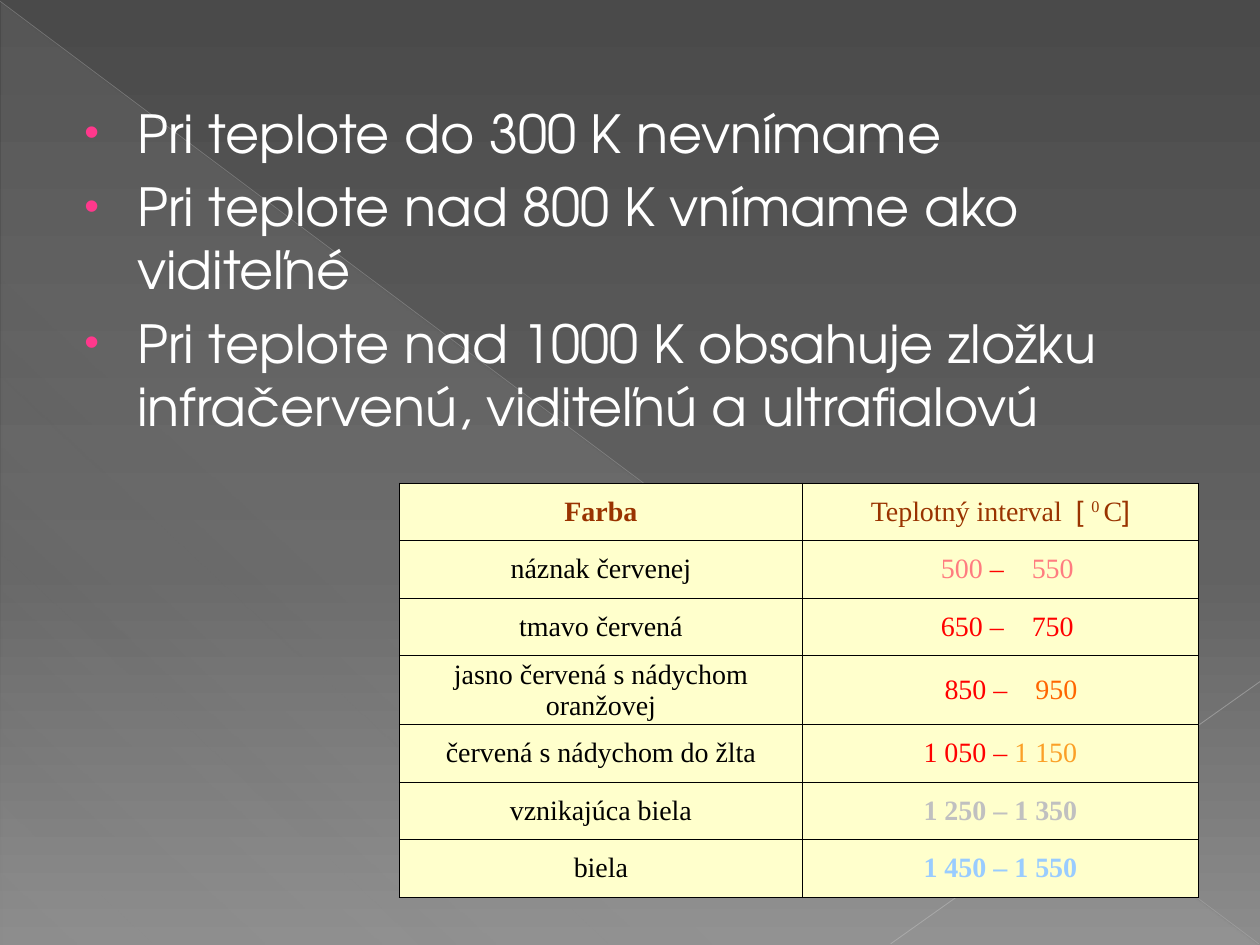
"""Build a slide on visible thermal radiation with a table of glow colours."""
from lxml.etree import SubElement
from pptx import Presentation
from pptx.dml.color import RGBColor
from pptx.enum.shapes import MSO_CONNECTOR as Connector, MSO_SHAPE as Shape
from pptx.enum.text import MSO_ANCHOR as Anchor, PP_ALIGN as Align
from pptx.oxml import parse_xml
from pptx.oxml.ns import nsdecls, qn
from pptx.util import Pt

WHITE = RGBColor(0xFF, 0xFF, 0xFF)
BLACK = RGBColor(0x00, 0x00, 0x00)
PINK = RGBColor(0xFF, 0x38, 0x8C)
CREAM = RGBColor(0xFF, 0xFF, 0xCC)
BROWN = RGBColor(0x99, 0x33, 0x00)
SALMON = RGBColor(0xFF, 0x7C, 0x80)
RED = RGBColor(0xFF, 0x00, 0x00)
ORANGE = RGBColor(0xFF, 0x66, 0x00)
AMBER = RGBColor(0xFB, 0xA0, 0x27)
SILVER = RGBColor(0xC0, 0xC0, 0xC0)
SKY = RGBColor(0x99, 0xCC, 0xFF)
DARK = RGBColor(0x4A, 0x4A, 0x4A)
MIDDLE = RGBColor(0x62, 0x62, 0x62)
LIGHT = RGBColor(0x8C, 0x8C, 0x8C)
HAZE = RGBColor(0xD2, 0xD2, 0xD2)
LONG_RAY = RGBColor(0xBF, 0xBF, 0xBF)
SHORT_RAY = RGBColor(0xC6, 0xC6, 0xC6)

BODY_FONT, TABLE_FONT, BRACKET_FONT = "TeX Gyre Adventor", "Times New Roman", "Arial"

BACKDROP = [(0, DARK, 100), (60, MIDDLE, 100), (100, LIGHT, 100)]
VEIL = [(0, HAZE, 10), (70, HAZE, 8), (100, HAZE, 1)]
RAYS = [
    ((0, 0.7, 719.3, 539.3), LONG_RAY, 0.39, 35),
    ((720, 389.5, 509, 539.3), SHORT_RAY, 0.47, 45),
]
POINTS = [
    "Pri teplote do 300 K nevnímame",
    "Pri teplote nad 800 K vnímame ako viditeľné",
    "Pri teplote nad 1000 K obsahuje zložku infračervenú, viditeľnú a ultrafialovú",
]
WIDE = {"spacing": 12}
HEADER = [
    ("Teplotný interval", BROWN, {}),
    (" ", BROWN, {"spacing": 4}),
    ("[ ", BROWN, {"font": BRACKET_FONT}),
    ("0 ", BROWN, {"raised": True}),
    ("C", BROWN, {}),
    ("]", BROWN, {"font": BRACKET_FONT}),
]
ROWS = [
    (("Farba", BROWN, {"bold": True}), HEADER, 0),
    (("náznak červenej", BLACK, {}),
     [("500 ", SALMON, {}), ("–", RED, {}), (" ", RED, WIDE), ("550", SALMON, {})], 8),
    (("tmavo červená", BLACK, {}),
     [("650 –", RED, {}), (" ", RED, WIDE), ("750", RED, {})], 8),
    (("jasno červená s nádychom oranžovej", BLACK, {}),
     [("850 –", RED, {}), (" ", RED, WIDE), ("950", ORANGE, {})], 12),
    (("červená s nádychom do žlta", BLACK, {}),
     [("1 050 – ", RED, {}), ("1 150", AMBER, {})], 0),
    (("vznikajúca biela", BLACK, {}), [("1 250 – 1 350", SILVER, {"bold": True})], 0),
    (("biela", BLACK, {}), [("1 450 – 1 550", SKY, {"bold": True})], 0),
]
COLUMN_WIDTHS = (230.4, 226.1)
ROW_HEIGHT, TALL_ROW_HEIGHT, TALL_ROW = 32.9, 39.4, 3


def add_text(para, text, color, font=TABLE_FONT, size=16, bold=False, raised=False, spacing=0):
    span = para.add_run()
    span.text = text
    span.font.name, span.font.size, span.font.bold = font, Pt(size), bold
    span.font.color.rgb = color
    properties = span.font._element
    if raised:
        properties.set("baseline", "30000")
    if spacing:
        properties.set("spc", str(spacing * 100))


def gradient(stops, angle):
    marks = "".join(
        f'<a:gs pos="{place * 1000}"><a:srgbClr val="{color}">'
        f'<a:alpha val="{alpha * 1000}"/></a:srgbClr></a:gs>'
        for place, color, alpha in stops)
    return parse_xml(f'<a:gradFill {nsdecls("a")} rotWithShape="1"><a:gsLst>{marks}</a:gsLst>'
                     f'<a:lin ang="{angle * 60000}" scaled="0"/></a:gradFill>')


def set_gradient(fill, parent, stops, angle):
    fill.solid()
    solid = parent.find(".//" + qn("a:solidFill"))
    solid.getparent().replace(solid, gradient(stops, angle))


def add_backdrop(page):
    set_gradient(page.background.fill, page._element, BACKDROP, 90)
    veil = page.shapes.add_shape(Shape.RIGHT_TRIANGLE, Pt(0.7), Pt(1.4), Pt(718.6), Pt(538.6))
    veil.shadow.inherit = False
    veil.line.fill.background()
    set_gradient(veil.fill, veil._element, VEIL, 133)
    for ends, color, width, alpha in RAYS:
        ray = page.shapes.add_connector(Connector.STRAIGHT, *map(Pt, ends))
        ray.line.color.rgb, ray.line.width = color, Pt(width)
        tint = ray._element.find(".//" + qn("a:srgbClr"))
        SubElement(tint, qn("a:alpha")).set("val", str(alpha * 1000))
        SubElement(ray._element.spPr, qn("a:effectLst"))


def add_bullet(para):
    properties = para._p.get_or_add_pPr()
    properties.set("marL", str(Pt(35.3)))
    properties.set("indent", str(Pt(-30.2)))
    before = SubElement(properties, qn("a:spcBef"))
    SubElement(before, qn("a:spcPct")).set("val", "20000")
    color = SubElement(properties, qn("a:buClr"))
    SubElement(color, qn("a:srgbClr")).set("val", str(PINK))
    SubElement(properties, qn("a:buSzPct")).set("val", "80000")
    SubElement(properties, qn("a:buFont")).set("typeface", "Arial")
    SubElement(properties, qn("a:buChar")).set("char", "•")


def add_points(page):
    box = page.shapes.add_textbox(Pt(36), Pt(54), Pt(648), Pt(246.2))
    frame = box.text_frame
    frame.word_wrap = True
    for index, point in enumerate(POINTS):
        para = frame.add_paragraph() if index else frame.paragraphs[0]
        add_bullet(para)
        add_text(para, point, WHITE, font=BODY_FONT, size=30)


def fill_cell(cell, spans, indent=0):
    cell.fill.solid()
    cell.fill.fore_color.rgb = CREAM
    cell.vertical_anchor = Anchor.MIDDLE
    cell.margin_left = cell.margin_right = Pt(3.6)
    cell.margin_top = cell.margin_bottom = 0
    for index, side in enumerate(("lnL", "lnR", "lnT", "lnB")):
        border = parse_xml(f'<a:{side} {nsdecls("a")} w="{Pt(0.5)}"><a:solidFill>'
                           f'<a:srgbClr val="{BLACK}"/></a:solidFill></a:{side}>')
        cell._tc.get_or_add_tcPr().insert(index, border)
    para = cell.text_frame.paragraphs[0]
    para.alignment = Align.CENTER
    if indent:
        para._p.get_or_add_pPr().set("marL", str(Pt(indent)))
    for text, color, style in spans:
        add_text(para, text, color, **style)


def add_colour_table(page):
    heights = [TALL_ROW_HEIGHT if index == TALL_ROW else ROW_HEIGHT for index in range(len(ROWS))]
    table = page.shapes.add_table(len(ROWS), len(COLUMN_WIDTHS), Pt(228.2), Pt(276),
                                  Pt(sum(COLUMN_WIDTHS)), Pt(sum(heights))).table
    table.first_row = table.horz_banding = False
    for column, width in zip(table.columns, COLUMN_WIDTHS):
        column.width = Pt(width)
    for row, height, (name, interval, indent) in zip(table.rows, heights, ROWS):
        row.height = Pt(height)
        fill_cell(row.cells[0], [name])
        fill_cell(row.cells[1], interval, indent)


def main():
    deck = Presentation()
    deck.slide_width, deck.slide_height = Pt(720), Pt(540)
    page = deck.slides.add_slide(deck.slide_layouts[6])
    add_backdrop(page)
    add_points(page)
    add_colour_table(page)
    deck.save("out.pptx")


if __name__ == "__main__":
    main()
